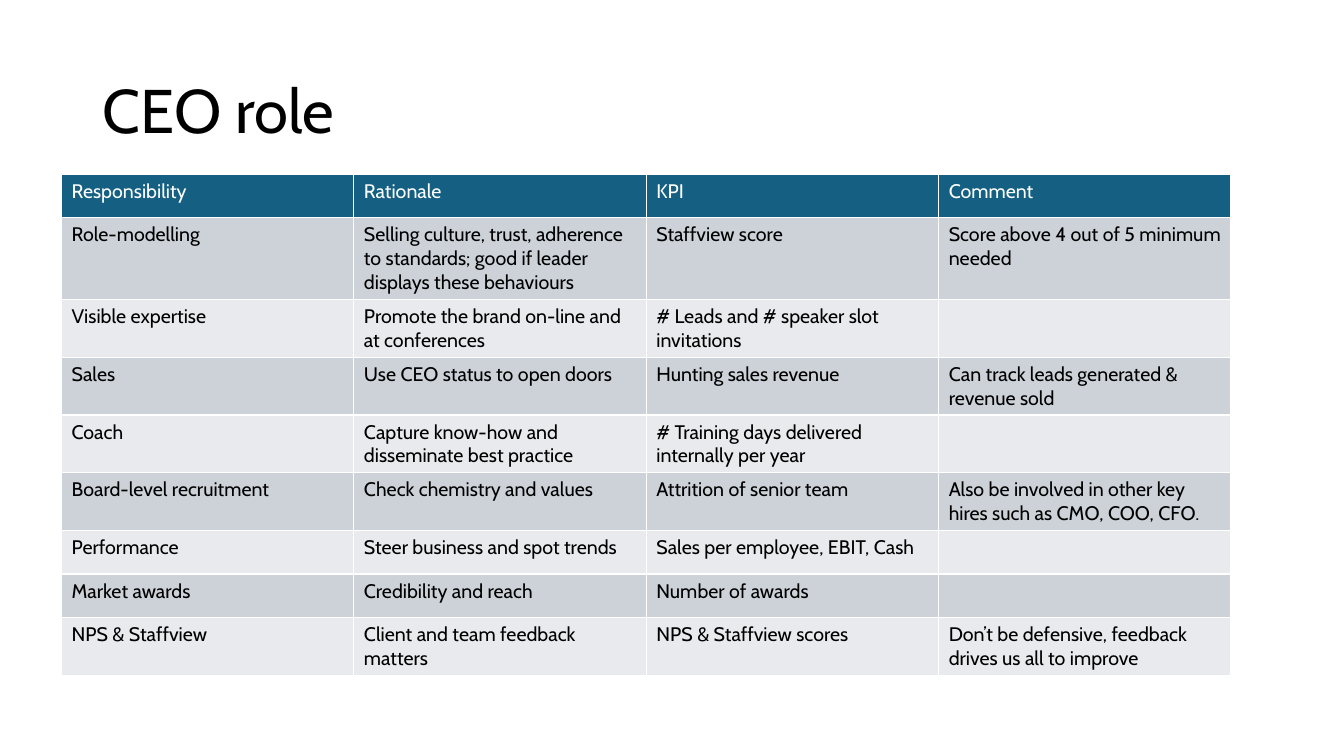
from pptx import Presentation
from pptx.dml.color import RGBColor
from pptx.enum.text import MSO_ANCHOR, PP_ALIGN
from pptx.util import Inches, Pt

LEFT, MIDDLE = PP_ALIGN.LEFT, MSO_ANCHOR.MIDDLE
TITLE_ONLY = 5

THEME = {
    "font": "Cabin",
    "title_size": Pt(44),
    "cell_size": Pt(14),
    "text": RGBColor.from_string("000000"),
    "header_text": RGBColor.from_string("FFFFFF"),
    "header_fill": RGBColor.from_string("156082"),
    "bands": [RGBColor.from_string(c) for c in ("E8EAED", "CCD2D8")],
}

ROLE_ROWS = [
    ("Responsibility", "Rationale", "KPI", "Comment"),
    ("Role-modelling",
     "Selling culture, trust, adherence to standards; good if leader displays these behaviours",
     "Staffview score", "Score above 4 out of 5 minimum needed"),
    ("Visible expertise", "Promote the brand on-line and at conferences",
     "# Leads and # speaker slot invitations", ""),
    ("Sales", "Use CEO status to open doors", "Hunting sales revenue",
     "Can track leads generated & revenue sold"),
    ("Coach", "Capture know-how and disseminate best practice",
     "# Training days delivered internally per year", ""),
    ("Board-level recruitment", "Check chemistry and values", "Attrition of senior team",
     "Also be involved in other key hires such as CMO, COO, CFO."),
    ("Performance", "Steer business and spot trends", "Sales per employee, EBIT, Cash", ""),
    ("Market awards", "Credibility and reach", "Number of awards", ""),
    ("NPS & Staffview", "Client and team feedback matters", "NPS & Staffview scores",
     "Don’t be defensive, feedback drives us all to improve"),
]
COL_WIDTH, ROW_HEIGHT = Inches(2.9), Inches(0.43)


def format_font(font, size, color):
    font.name, font.size, font.bold = THEME["font"], size, False
    font.color.rgb = color


prs = Presentation()
prs.slide_width, prs.slide_height = Inches(13.33), Inches(7.5)
s = prs.slides.add_slide(prs.slide_layouts[TITLE_ONLY])

# Title
title = s.shapes.title
title_box = {"left": 0.92, "top": 0.4, "width": 11.5, "height": 1.45}
for name, value in title_box.items():
    setattr(title, name, Inches(value))
tf = title.text_frame
tf.text = "CEO role"
tf.vertical_anchor = MIDDLE
p = tf.paragraphs[0]
p.alignment, p.line_spacing = LEFT, 0.9
format_font(p.runs[0].font, THEME["title_size"], THEME["text"])

# Responsibilities table: rows grow with their text
n_rows, n_cols = len(ROLE_ROWS), len(ROLE_ROWS[0])
table = s.shapes.add_table(n_rows, n_cols, Inches(0.61), Inches(1.73),
                           COL_WIDTH * n_cols, ROW_HEIGHT * n_rows).table
for column in table.columns:
    column.width = COL_WIDTH

for i, texts in enumerate(ROLE_ROWS):
    fill = THEME["bands"][i % 2] if i else THEME["header_fill"]
    color = THEME["text"] if i else THEME["header_text"]
    for j, text in enumerate(texts):
        cell = table.cell(i, j)
        cell.fill.solid()
        cell.fill.fore_color.rgb = fill
        if text:
            r = cell.text_frame.paragraphs[0].add_run()
            r.text = text
            format_font(r.font, THEME["cell_size"], color)

prs.save("out.pptx")
